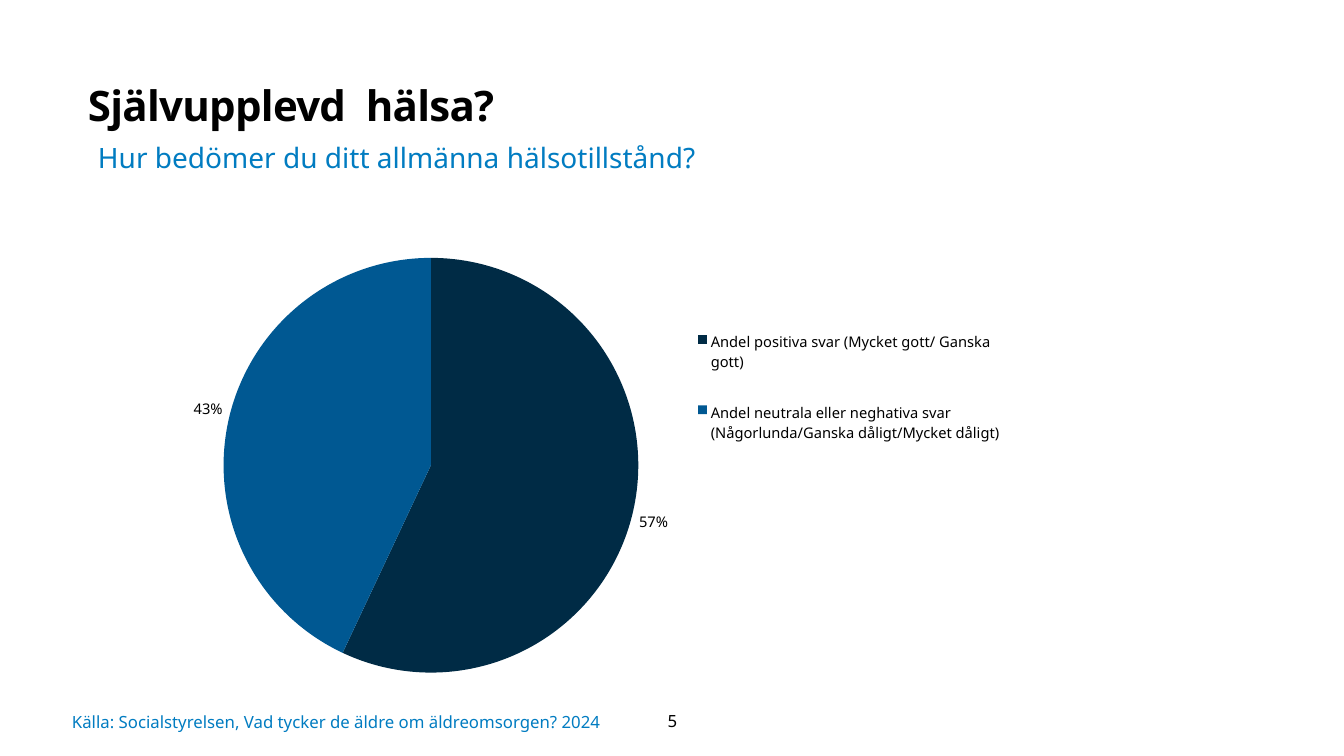
"""Build a slide with a pie chart of self-rated health among older people."""
from lxml import etree
from pptx import Presentation
from pptx import util as u
from pptx.chart.data import CategoryChartData
from pptx.dml.color import RGBColor
from pptx.enum import chart as ch, text
from pptx.oxml import ns

PX = 914400 / 100.8
FONT = "Noto Sans"
BLACK = RGBColor(0x00, 0x00, 0x00)
BLUE = RGBColor(0x01, 0x7C, 0xC1)
NAVY = RGBColor(0x00, 0x2B, 0x45)
MID_BLUE = RGBColor(0x00, 0x58, 0x92)


def add_text(s, box, words, size, color, margins, anchor):
    tb = s.shapes.add_textbox(*[round(v * PX) for v in box])
    tf = tb.text_frame
    tf.word_wrap = True
    tf.vertical_anchor = anchor
    tf.margin_left, tf.margin_top, tf.margin_right, tf.margin_bottom = [round(m * PX) for m in margins]
    tf.text = words
    p = tf.paragraphs[0]
    r = p.runs[0]
    r.font.name, r.font.size = FONT, u.Pt(size)
    r.font.color.rgb = color
    return p


def set_layout(parent, index, x, y, w, h, inner=False):
    for old in parent.findall(ns.qn("c:layout")):
        parent.remove(old)
    layout = etree.Element(ns.qn("c:layout"))
    manual = etree.SubElement(layout, ns.qn("c:manualLayout"))
    values = [("xMode", "edge"), ("yMode", "edge"), ("x", x), ("y", y), ("w", w), ("h", h)]
    if inner:
        values.insert(0, ("layoutTarget", "inner"))
    for tag, value in values:
        etree.SubElement(manual, ns.qn(f"c:{tag}")).set("val", str(value))
    parent.insert(index, layout)


prs = Presentation()
prs.slide_width, prs.slide_height = round(1344 * PX), round(756 * PX)
s = prs.slides.add_slide(prs.slide_layouts[6])
TOP, MIDDLE = text.MSO_ANCHOR.TOP, text.MSO_ANCHOR.MIDDLE
INSET = (10, 5, 10, 5)

p = add_text(s, (88, 74, 991, 61), "Självupplevd  hälsa?", 30, BLACK, (0, 0, 10, 5), TOP)
p.line_spacing = 1.1
p.runs[0].font.bold = True
p.runs[0].font._element.set("spc", "-50")

add_text(s, (88, 135, 794, 44), "Hur bedömer du ditt allmänna hälsotillstånd?", 20, BLUE, INSET, TOP)

data = CategoryChartData()
data.categories = [
    "Andel positiva svar (Mycket gott/ Ganska gott)",
    "Andel neutrala eller neghativa svar (Någorlunda/Ganska dåligt/Mycket dåligt)",
]
data.add_series("Series 1", (57, 43))
box = [round(v * PX) for v in (167, 214, 880, 488)]
chart = s.shapes.add_chart(ch.XL_CHART_TYPE.PIE, *box, data).chart
chart.has_title = False
chart.font.name, chart.font.size = FONT, u.Pt(10)
chart.font.color.rgb = BLACK

chart.has_legend = True
legend = chart.legend
legend.position = ch.XL_LEGEND_POSITION.RIGHT
legend.include_in_layout = False

plot = chart.plots[0]
plot.vary_by_categories = True
for i, color in enumerate((NAVY, MID_BLUE)):
    fill = plot.series[0].points[i].format.fill
    fill.solid()
    fill.fore_color.rgb = color

plot.has_data_labels = True
labels = plot.data_labels
labels.show_percentage, labels.show_value = True, False
labels.number_format, labels.number_format_is_linked = "0%", False
labels.position = ch.XL_LABEL_POSITION.OUTSIDE_END
for font in (legend.font, labels.font):
    font.name, font.size = FONT, u.Pt(10.5)
    font.color.rgb = BLACK

set_layout(chart._chartSpace.chart.plotArea, 0, 0.06, 0.09, 0.48, 0.85, inner=True)
set_layout(legend._element, 1, 0.6, 0.18, 0.35, 0.35)

add_text(s, (72, 701, 549, 42), "Källa: Socialstyrelsen, Vad tycker de äldre om äldreomsorgen? 2024",
         12, BLUE, (0, 0, 0, 0), MIDDLE)
p = add_text(s, (621, 701, 103, 40), "5", 12, BLACK, INSET, MIDDLE)
p.alignment = text.PP_ALIGN.CENTER

prs.save("out.pptx")
